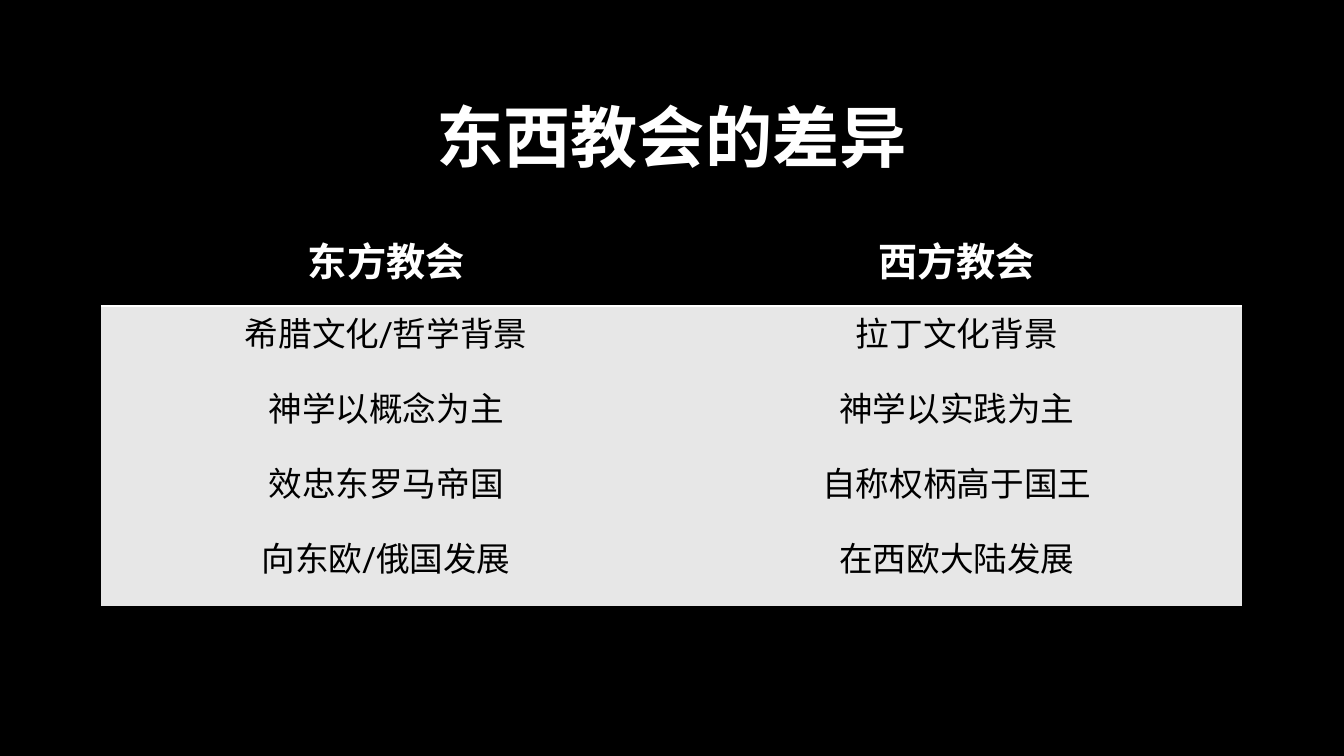
from lxml.etree import SubElement
from pptx import Presentation
from pptx.dml.color import RGBColor as RGB
from pptx.enum.lang import MSO_LANGUAGE_ID as LANG
from pptx.enum.text import MSO_ANCHOR as ANCHOR, PP_ALIGN as ALIGN
from pptx.oxml import parse_xml
from pptx.oxml.ns import nsdecls, qn
from pptx.util import Inches, Pt

# Content
HEADING = "东西教会的差异"
CHURCHES = ("东方教会", "西方教会")
DIFFERENCES = [
    ("希腊文化/哲学背景", "拉丁文化背景"),
    ("神学以概念为主", "神学以实践为主"),
    ("效忠东罗马帝国", "自称权柄高于国王"),
    ("向东欧/俄国发展", "在西欧大陆发展"),
]

# Theme
THEME = {
    "font": "Roboto Slab",
    "black": RGB(0, 0, 0),
    "white": RGB(255, 255, 255),
    "panel": RGB(0xE7, 0xE7, 0xE7),
    "heading": {"size": Pt(48), "bold": True},
    "church": {"size": Pt(28), "bold": True},
    "difference": {"size": Pt(24), "bold": False},
    "rule": Pt(2),
}
PLAIN_TABLE = "{2D5ABB26-0587-4C30-8999-92F81FD0307C}"

# Layout
LEFT, WIDTH = Inches(1), Inches(11.32)
HEADING_TOP, HEADING_HEIGHT = Inches(0.67), Inches(1.45)
TABLE_TOP, TABLE_HEIGHT = Inches(2.29), Inches(3.72)


def write(frame, text, style, color):
    paragraph = frame.paragraphs[0]
    paragraph.alignment = ALIGN.CENTER
    run = paragraph.add_run()
    run.text = text
    formats = {"name": THEME["font"], "language_id": LANG.SIMPLIFIED_CHINESE, **THEME[style]}
    for attribute, value in formats.items():
        setattr(run.font, attribute, value)
    run.font.color.rgb = color
    SubElement(run.font._element, qn("a:ea"), typeface=THEME["font"])
    return paragraph


def underline_cell(cell):
    cell._tc.get_or_add_tcPr().insert(0, parse_xml(
        f'<a:lnB {nsdecls("a")} w="{THEME["rule"]}"><a:solidFill>'
        f'<a:srgbClr val="{THEME["white"]}"/></a:solidFill></a:lnB>'))


def main():
    deck = Presentation()
    deck.slide_width, deck.slide_height = Inches(13.33), Inches(7.5)
    slide = deck.slides.add_slide(deck.slide_layouts[6])
    slide.background.fill.solid()
    slide.background.fill.fore_color.rgb = THEME["black"]

    # Heading
    heading = slide.shapes.add_textbox(LEFT, HEADING_TOP, WIDTH, HEADING_HEIGHT).text_frame
    heading.word_wrap = True
    heading.vertical_anchor = ANCHOR.MIDDLE
    write(heading, HEADING, "heading", THEME["white"]).line_spacing = 0.9

    # Comparison table
    rows = [CHURCHES, *DIFFERENCES]
    comparison = slide.shapes.add_table(
        len(rows), len(CHURCHES), LEFT, TABLE_TOP, WIDTH, TABLE_HEIGHT).table
    comparison.horz_banding = False
    comparison._tbl.tblPr.find(qn("a:tableStyleId")).text = PLAIN_TABLE

    for row_index, row in enumerate(rows):
        is_header = row_index == 0
        style = "church" if is_header else "difference"
        ink, ground = ("white", "black") if is_header else ("black", "panel")
        for column_index, text in enumerate(row):
            cell = comparison.cell(row_index, column_index)
            cell.fill.solid()
            cell.fill.fore_color.rgb = THEME[ground]
            write(cell.text_frame, text, style, THEME[ink])
            if is_header:
                underline_cell(cell)

    deck.save("out.pptx")


if __name__ == "__main__":
    main()
